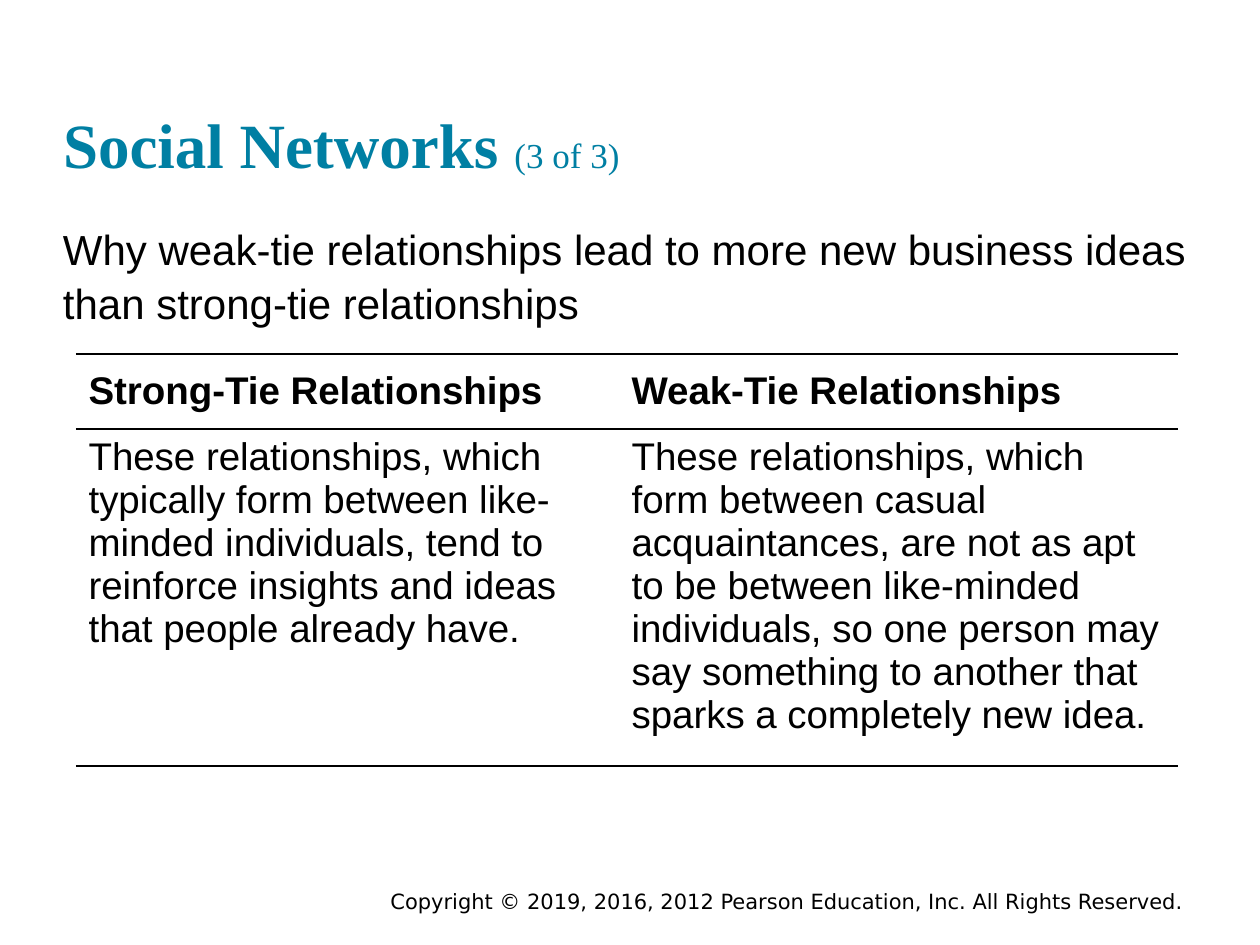
from lxml import etree
from pptx import Presentation
from pptx.dml.color import RGBColor
from pptx.enum.text import MSO_ANCHOR, MSO_AUTO_SIZE, PP_ALIGN
from pptx.oxml import parse_xml
from pptx.oxml.ns import nsdecls
from pptx.util import Pt

BOTTOM, MIDDLE, TOP = MSO_ANCHOR.BOTTOM, MSO_ANCHOR.MIDDLE, MSO_ANCHOR.TOP
LEFT = PP_ALIGN.LEFT
NO_FIT = MSO_AUTO_SIZE.NONE
EMU_PER_PX = 914400 / 126
BLACK, WHITE, TEAL = "000000", "FFFFFF", "007FA3"


def px(*lengths):
    return [round(length * EMU_PER_PX) for length in lengths]


def add_run(paragraph, text, size, font, color=BLACK, bold=False):
    run = paragraph.add_run()
    run.text = text
    run.font.size = Pt(size)
    run.font.name = font
    run.font.bold = bold
    run.font.color.rgb = RGBColor.from_string(color)


prs = Presentation()
prs.slide_width, prs.slide_height = px(1260, 945)
slide = prs.slides.add_slide(prs.slide_layouts[5])

copyright_line = slide.shapes.add_textbox(*px(378, 882, 840, 38)).text_frame
copyright_line.word_wrap = True
add_run(copyright_line.paragraphs[0],
        "Copyright © 2019, 2016, 2012 Pearson Education, Inc. All Rights Reserved.",
        12, "DejaVu Sans")

title = slide.shapes.title
title.left, title.top, title.width, title.height = px(63, 30, 1134, 151)
heading = title.text_frame
intro = slide.shapes.add_textbox(*px(63, 220, 1134, 105)).text_frame
for frame, anchor in ((heading, BOTTOM), (intro, TOP)):
    frame.margin_left = frame.margin_top = frame.margin_right = frame.margin_bottom = 0
    frame.word_wrap = True
    frame.auto_size = NO_FIT
    frame.vertical_anchor = anchor
    frame.paragraphs[0].alignment = LEFT
add_run(heading.paragraphs[0], "Social Networks ", 36, "Times New Roman", TEAL, True)
add_run(heading.paragraphs[0], "(3 of 3)", 20, "Times New Roman", TEAL)
intro.paragraphs[0].line_spacing = 1.07
add_run(intro.paragraphs[0],
        "Why weak-tie relationships lead to more new business ideas than strong-tie relationships",
        24, "Arial")

comparison = [
    ("Strong-Tie Relationships", "Weak-Tie Relationships"),
    ("These relationships, which typically form between like-minded individuals, "
     "tend to reinforce insights and ideas that people already have.",
     "These relationships, which form between casual acquaintances, are not as apt "
     "to be between like-minded individuals, so one person may say something to "
     "another that sparks a completely new idea."),
]
ties = slide.shapes.add_table(2, 2, *px(76, 354, 1102, 412)).table
ties.first_row = ties.horz_banding = False
for column, width in zip(ties.columns, px(543, 559)):
    column.width = width
for row, height in zip(ties.rows, px(75, 337)):
    row.height = height

for r, texts in enumerate(comparison):
    for c, text in enumerate(texts):
        cell = ties.cell(r, c)
        cell.vertical_anchor = MIDDLE if r == 0 else TOP
        cell.fill.solid()
        cell.fill.fore_color.rgb = RGBColor.from_string(WHITE)
        add_run(cell.text_frame.paragraphs[0], text, 22, "Arial", bold=r == 0)
        properties = cell._tc.get_or_add_tcPr()
        for position, side in enumerate(("lnL", "lnR", "lnT", "lnB")):
            border = parse_xml(f'<a:{side} {nsdecls("a")} w="{Pt(1)}"/>')
            if side in ("lnT", "lnB"):
                border.append(parse_xml(
                    f'<a:solidFill {nsdecls("a")}><a:srgbClr val="{BLACK}"/></a:solidFill>'))
            else:
                etree.SubElement(border, "{http://schemas.openxmlformats.org/drawingml/2006/main}noFill")
            properties.insert(position, border)

prs.save("out.pptx")
